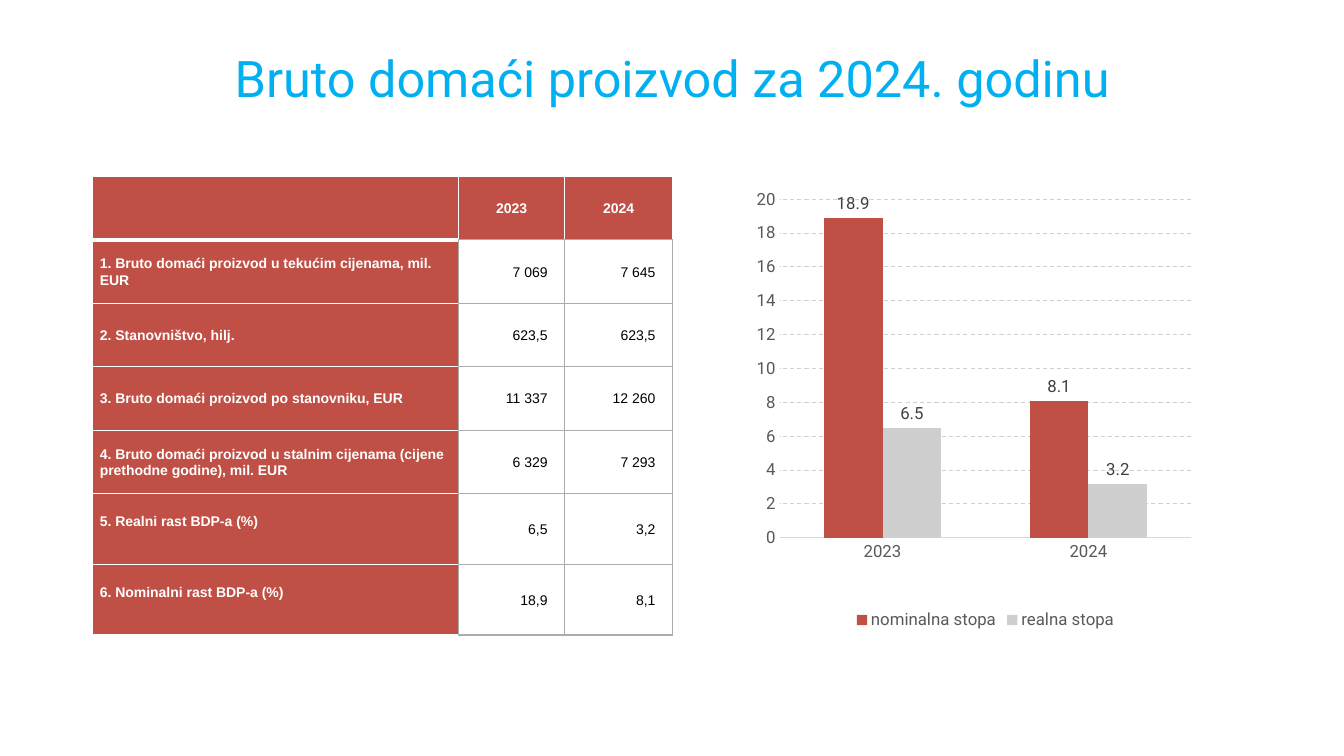
from pptx import Presentation
from pptx.chart.data import CategoryChartData
from pptx.dml.color import RGBColor
from pptx.enum.chart import XL_CHART_TYPE as Kind, XL_LABEL_POSITION as Spot
from pptx.enum.chart import XL_LEGEND_POSITION as Side, XL_TICK_MARK as Tick
from pptx.enum.dml import MSO_LINE as Dash
from pptx.enum.text import MSO_ANCHOR as Anchor, PP_ALIGN as Align
from pptx.oxml import parse_xml
from pptx.oxml.ns import nsdecls, qn
from pptx.util import Inches, Pt

WHITE = RGBColor(0xFF, 0xFF, 0xFF)
BLACK = RGBColor(0, 0, 0)
SKY = RGBColor(0x00, 0xB0, 0xF0)
RED = RGBColor(0xC0, 0x50, 0x46)
SILVER = RGBColor(0xCF, 0xCF, 0xCF)
EDGE = RGBColor(0xAF, 0xAB, 0xAB)
GRID = RGBColor(0xD0, 0xCE, 0xCE)
BASE = RGBColor(0xD9, 0xD9, 0xD9)
GRAY = RGBColor(0x59, 0x59, 0x59)
DARK = RGBColor(0x40, 0x40, 0x40)

HEADS = ["", "2023", "2024"]
ROWS = [
    ("1. Bruto domaći proizvod u tekućim cijenama, mil. EUR", "7 069", "7 645"),
    ("2. Stanovništvo, hilj.", "623,5", "623,5"),
    ("3. Bruto domaći proizvod po stanovniku, EUR", "11 337", "12 260"),
    ("4. Bruto domaći proizvod u stalnim cijenama (cijene prethodne godine), mil. EUR",
     "6 329", "7 293"),
    ("5. Realni rast BDP-a (%)", "6,5", "3,2"),
    ("6. Nominalni rast BDP-a (%)", "18,9", "8,1"),
]
WIDTHS = [3.63, 1.05, 1.07]
HEIGHTS = [0.63] * 5 + [0.7] * 2
RATES = [("nominalna stopa", (18.9, 8.1), RED), ("realna stopa", (6.5, 3.2), SILVER)]


def style(font, face, size, color, bold=False):
    font.name, font.size, font.bold = face, Pt(size), bold
    font.color.rgb = color


def write(frame, text, face="Arial", size=10, color=BLACK, bold=False,
          align=Align.LEFT, space=1.07):
    para = frame.paragraphs[0]
    para.alignment, para.line_spacing = align, space
    run = para.add_run()
    run.text = text
    style(run.font, face, size, color, bold)


def border(cell, **sides):
    """Draw cell sides, each given as (color, points); call before filling."""
    props = cell._tc.get_or_add_tcPr()
    for side in "LRTB":
        color, width = sides[side]
        props.append(parse_xml(
            f'<a:ln{side} {nsdecls("a")} w="{Pt(width)}"><a:solidFill>'
            f'<a:srgbClr val="{color}"/></a:solidFill></a:ln{side}>'))


def place(chart, x, y, w, h):
    """Fix the inner plot area as shares of the chart's size."""
    area = chart._chartSpace.chart.plotArea
    for old in area.findall(qn("c:layout")):
        area.remove(old)
    spots = "".join(f'<c:{tag} val="{val}"/>' for tag, val in
                    zip("xywh", (x, y, w, h)))
    area.insert(0, parse_xml(
        f'<c:layout {nsdecls("c")}><c:manualLayout><c:layoutTarget val="inner"/>'
        f'<c:xMode val="edge"/><c:yMode val="edge"/>{spots}'
        '</c:manualLayout></c:layout>'))


class Deck:
    def __init__(self):
        self.show = Presentation()
        self.show.slide_width, self.show.slide_height = Inches(13.33), Inches(7.5)
        self.slide = self.show.slides.add_slide(self.show.slide_layouts[6])
        self.face = "Roboto"

    def title(self, text, box):
        frame = self.slide.shapes.add_textbox(*map(Inches, box)).text_frame
        frame.word_wrap = True
        frame.vertical_anchor = Anchor.BOTTOM
        frame.margin_left = frame.margin_right = 0
        frame.margin_top = frame.margin_bottom = 0
        write(frame, text, face=self.face, size=36, color=SKY,
              align=Align.CENTER, space=0.9)

    def table(self, box):
        table = self.slide.shapes.add_table(
            len(HEIGHTS), len(WIDTHS), *map(Inches, box)).table
        table.first_row = table.horz_banding = False
        for col, width in zip(table.columns, WIDTHS):
            col.width = Inches(width)
        for row, height in zip(table.rows, HEIGHTS):
            row.height = Inches(height)
        for r, texts in enumerate([HEADS, *ROWS]):
            for c, text in enumerate(texts):
                self.cell(table.cell(r, c), text, r, c)

    def cell(self, cell, text, r, c):
        head, label = r == 0, c == 0
        value = not head and not label
        cell.vertical_anchor = Anchor.MIDDLE
        cell.margin_left = Inches(0.07)
        cell.margin_right = Inches(0.17 if value else 0.07)
        cell.margin_top = 0
        cell.margin_bottom = Inches(0.16 if label and r > 4 else 0)
        pale, edge = (WHITE, 1), (EDGE, 1)
        if value:
            border(cell, L=edge, R=edge, T=edge, B=edge)
        elif head:
            border(cell, L=pale, R=pale, T=pale, B=(WHITE, 3) if label else edge)
        else:
            border(cell, L=pale, R=edge, T=(WHITE, 3) if r == 1 else pale, B=pale)
        cell.fill.solid()
        cell.fill.fore_color.rgb = WHITE if value else RED
        if text:
            align = Align.CENTER if head else Align.LEFT if label else Align.RIGHT
            write(cell.text_frame, text, color=BLACK if value else WHITE,
                  bold=not value, align=align)

    def chart(self, box):
        data = CategoryChartData(number_format="0.0")
        data.categories = HEADS[1:]
        for name, vals, _ in RATES:
            data.add_series(name, vals)
        chart = self.slide.shapes.add_chart(
            Kind.COLUMN_CLUSTERED, *map(Inches, box), data).chart
        style(chart.font, self.face, 12, BLACK)
        chart.has_title = False
        chart.has_legend = True
        chart.legend.position = Side.BOTTOM
        chart.legend.include_in_layout = False
        style(chart.legend.font, self.face, 12, GRAY)
        place(chart, 0.07, 0.05, 0.86, 0.74)
        self.axes(chart.category_axis, chart.value_axis)

        plot = chart.plots[0]
        plot.gap_width, plot.overlap, plot.vary_by_categories = 150, 0, False
        for bars, (_, _, color) in zip(plot.series, RATES):
            bars.invert_if_negative = False
            bars.format.fill.solid()
            bars.format.fill.fore_color.rgb = color
            tags = bars.data_labels
            tags.show_value = True
            tags.position = Spot.OUTSIDE_END
            tags.number_format, tags.number_format_is_linked = "0.0", False
            style(tags.font, self.face, 12, DARK)

    def axes(self, years, scale):
        for axis in (years, scale):
            axis.major_tick_mark = axis.minor_tick_mark = Tick.NONE
            style(axis.tick_labels.font, self.face, 12, GRAY)
        years.format.line.color.rgb = BASE
        years.format.line.width = Pt(0.75)
        scale.format.line.fill.background()
        scale.minimum_scale, scale.maximum_scale, scale.major_unit = 0, 20, 2
        scale.tick_labels.number_format = "0"
        scale.tick_labels.number_format_is_linked = False
        scale.has_major_gridlines = True
        grid = scale.major_gridlines.format.line
        grid.color.rgb, grid.width, grid.dash_style = GRID, Pt(0.75), Dash.DASH


def main():
    deck = Deck()
    deck.title("Bruto domaći proizvod za 2024. godinu", (0.92, 0.4, 11.5, 0.68))
    deck.table((0.92, 1.75, sum(WIDTHS), sum(HEIGHTS)))
    deck.chart((7.4, 1.75, 4.75, 4.54))
    deck.show.save("out.pptx")


if __name__ == "__main__":
    main()
